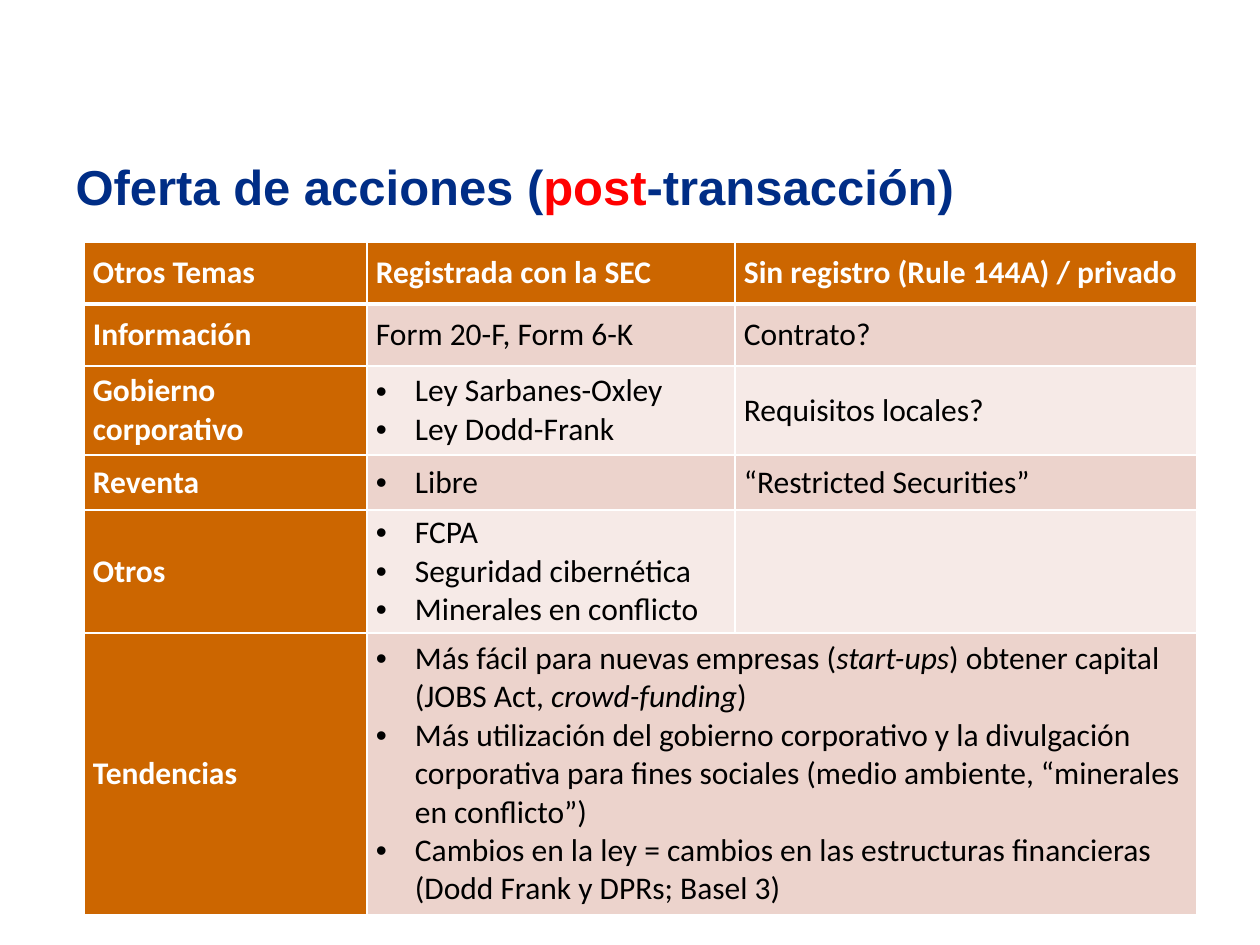
from lxml import etree
from pptx import Presentation
from pptx import util as u
from pptx.dml.color import RGBColor
from pptx.enum import text
from pptx.oxml import ns

NAVY = RGBColor(0x00, 0x2D, 0x86)
RED = RGBColor(0xFF, 0x00, 0x00)
WHITE = RGBColor(0xFF, 0xFF, 0xFF)
BLACK = RGBColor(0x00, 0x00, 0x00)
ORANGE = RGBColor(0xCC, 0x66, 0x00)
BANDS = [RGBColor(0xF6, 0xEA, 0xE7), RGBColor(0xEC, 0xD3, 0xCC)]

COLUMN_WIDTHS = [283, 368, 462]
ROW_HEIGHTS = [62, 62, 89, 55, 123, 282]
BULLET_INDENT = 39
ROWS = [
    ["Otros Temas", "Registrada con la SEC", "Sin registro (Rule 144A) / privado"],
    ["Información", "Form 20-F, Form 6-K", "Contrato?"],
    ["Gobierno corporativo", ["Ley Sarbanes-Oxley", "Ley Dodd-Frank"], "Requisitos locales?"],
    ["Reventa", ["Libre"], "“Restricted Securities”"],
    ["Otros", ["FCPA", "Seguridad cibernética", "Minerales en conflicto"], ""],
    ["Tendencias", [
        "Más fácil para nuevas empresas (*start-ups*) obtener capital (JOBS Act, *crowd-funding*)",
        "Más utilización del gobierno corporativo y la divulgación corporativa para fines "
        "sociales (medio ambiente, “minerales en conflicto”)",
        "Cambios en la ley = cambios en las estructuras financieras (Dodd Frank y DPRs; Basel 3)",
    ], ""],
]


def px(count):
    return u.Emu(round(count * 914400 / 126))


def add_title(page, left, top, width, height):
    title = page.shapes.title
    title.left, title.top, title.width, title.height = map(px, (left, top, width, height))
    frame = title.text_frame
    frame.word_wrap = True
    frame.vertical_anchor = text.MSO_ANCHOR.MIDDLE
    para = frame.paragraphs[0]
    para.alignment = text.PP_ALIGN.LEFT
    para.font.name = "Arial"
    para.font.size = u.Pt(28)
    para.font.bold = True
    for words, color in [("Oferta de acciones (", NAVY), ("post", RED), ("-transacción)", NAVY)]:
        span = para.add_run()
        span.text = words
        span.font.color.rgb = color
    para.add_line_break()


def add_bullet(para):
    properties = para._p.get_or_add_pPr()
    properties.set("marL", str(px(BULLET_INDENT)))
    properties.set("indent", str(-px(BULLET_INDENT)))
    etree.SubElement(properties, ns.qn("a:buFont")).set("typeface", "Arial")
    etree.SubElement(properties, ns.qn("a:buChar")).set("char", "•")


def add_borders(cell, bottom_width):
    properties = cell._tc.get_or_add_tcPr()
    for index, side in enumerate("LRTB"):
        width = bottom_width if side == "B" else 1
        line = etree.Element(ns.qn(f"a:ln{side}"), w=str(u.Pt(width)))
        fill = etree.SubElement(line, ns.qn("a:solidFill"))
        etree.SubElement(fill, ns.qn("a:srgbClr")).set("val", str(WHITE))
        properties.insert(index, line)


def fill_cell(cell, content, is_header, band):
    cell.vertical_anchor = text.MSO_ANCHOR.MIDDLE
    cell.margin_left = cell.margin_right = px(9)
    cell.margin_top = cell.margin_bottom = 0
    cell.fill.solid()
    cell.fill.fore_color.rgb = ORANGE if is_header else band
    bulleted = isinstance(content, list)
    frame = cell.text_frame
    for index, line in enumerate(content if bulleted else [content]):
        para = frame.add_paragraph() if index else frame.paragraphs[0]
        if bulleted:
            add_bullet(para)
        para.font.name = "Calibri"
        para.font.size = u.Pt(18)
        para.font.bold = is_header
        para.font.color.rgb = WHITE if is_header else BLACK
        for part, words in enumerate(line.split("*")):
            if words:
                span = para.add_run()
                span.text = words
                if part % 2:
                    span.font.italic = True


def add_topics_table(page, left, top):
    frame = page.shapes.add_table(
        len(ROW_HEIGHTS), len(COLUMN_WIDTHS), px(left), px(top),
        px(sum(COLUMN_WIDTHS)), px(sum(ROW_HEIGHTS)))
    table = frame.table
    table.first_col = True
    for column, width in zip(table.columns, COLUMN_WIDTHS):
        column.width = px(width)
    for row, height in zip(table.rows, ROW_HEIGHTS):
        row.height = px(height)
    for r, contents in enumerate(ROWS):
        for c, content in enumerate(contents):
            cell = table.cell(r, c)
            fill_cell(cell, content, r == 0 or c == 0, BANDS[r % 2])
            add_borders(cell, 1 if r else 3)
    last = len(ROWS) - 1
    table.cell(last, 1).merge(table.cell(last, 2))


def main():
    deck = Presentation()
    deck.slide_width, deck.slide_height = px(1260), px(945)
    page = deck.slides.add_slide(deck.slide_layouts[5])
    add_title(page, 63, 136, 1176, 158)
    add_topics_table(page, 84, 242)
    deck.save("out.pptx")


if __name__ == "__main__":
    main()
